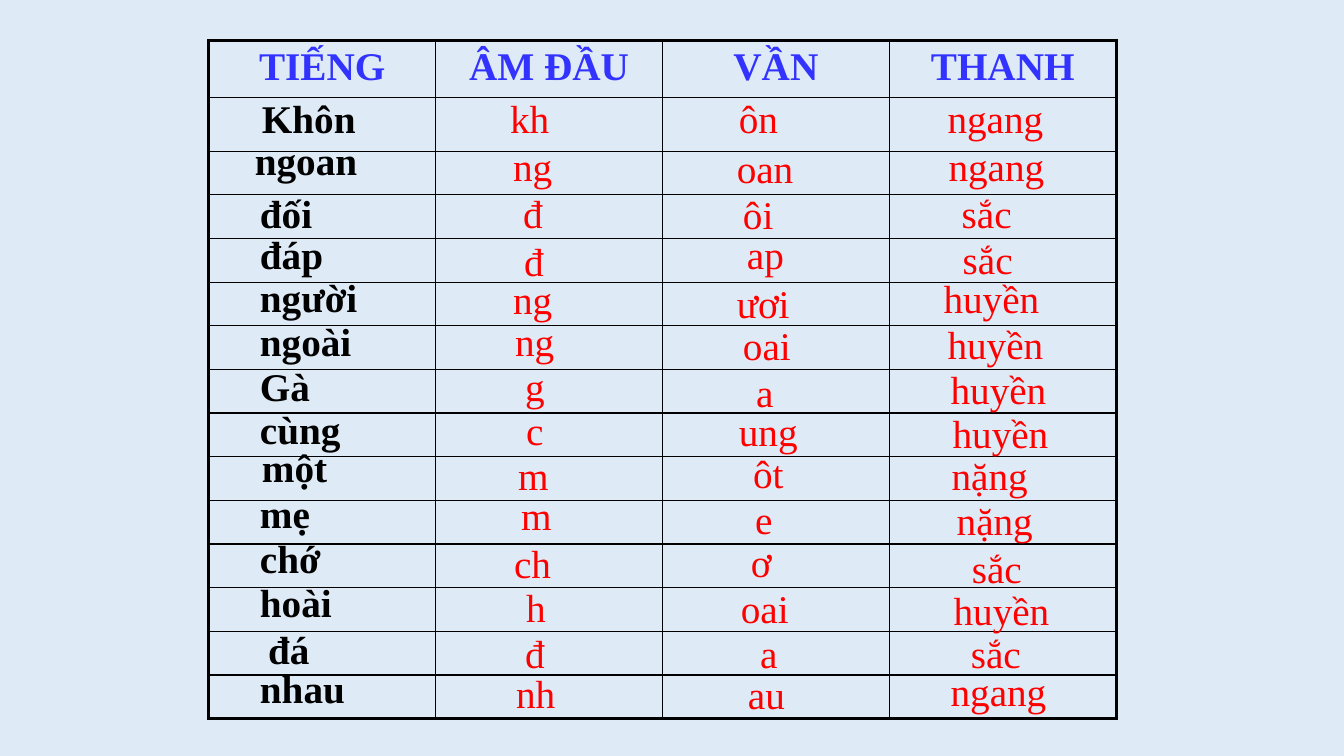
import pptx
import pptx.dml.color
import pptx.enum.text
import pptx.oxml.ns
import pptx.util
import lxml.etree

Inches = pptx.util.Inches

headings = ["TIẾNG", "ÂM ĐẦU", "VẦN", "THANH"]
# syllables: (width, tone width, then (part, left, top) per column)
syllables = [
    (1.51, 1.51, ("Khôn", 2.5, 0.89), ("kh", 4.96, 0.89), ("ôn", 7.23, 0.89), ("ngang", 9.3, 0.89)),
    (2.04, 2.04, ("ngoan", 2.43, 1.3), ("ng", 4.99, 1.36), ("oan", 7.21, 1.38), ("ngang", 9.31, 1.36)),
    (2.08, 2.08, ("đối", 2.48, 1.83), ("đ", 5.09, 1.83), ("ôi", 7.27, 1.84), ("sắc", 9.44, 1.83)),
    (1.51, 2.08, ("đáp", 2.48, 2.24), ("đ", 5.1, 2.31), ("ap", 7.31, 2.24), ("sắc", 9.45, 2.29)),
    (2.2, 1.51, ("người", 2.48, 2.66), ("ng", 4.99, 2.68), ("ươi", 7.21, 2.72), ("huyền", 9.26, 2.67)),
    (1.85, 1.51, ("ngoài", 2.48, 3.1), ("ng", 5.01, 3.1), ("oai", 7.27, 3.14), ("huyền", 9.3, 3.13)),
    (1.51, 1.51, ("Gà", 2.48, 3.55), ("g", 5.11, 3.55), ("a", 7.4, 3.6), ("huyền", 9.33, 3.58)),
    (1.51, 1.51, ("cùng", 2.48, 3.97), ("c", 5.12, 3.98), ("ung", 7.23, 3.99), ("huyền", 9.35, 4.01)),
    (1.51, 1.51, ("một", 2.5, 4.35), ("m", 5.04, 4.43), ("ôt", 7.37, 4.41), ("nặng", 9.34, 4.43)),
    (1.51, 1.51, ("mẹ", 2.48, 4.81), ("m", 5.07, 4.83), ("e", 7.39, 4.86), ("nặng", 9.39, 4.87)),
    (1.74, 2.08, ("chớ", 2.48, 5.25), ("ch", 5, 5.3), ("ơ", 7.35, 5.29), ("sắc", 9.54, 5.35)),
    (2.08, 1.51, ("hoài", 2.48, 5.69), ("h", 5.12, 5.74), ("oai", 7.25, 5.75), ("huyền", 9.36, 5.77)),
    (1.51, 2.08, ("đá", 2.56, 6.15), ("đ", 5.11, 6.19), ("a", 7.44, 6.19), ("sắc", 9.53, 6.19)),
    (1.51, 1.51, ("nhau", 2.48, 6.54), ("nh", 5.02, 6.59), ("au", 7.32, 6.6), ("ngang", 9.33, 6.57)),
]

theme = {
    "background": "DEEBF7",
    "border": "000000",
    "inner_line": 1,
    "outer_line": 2.25,
    "heading": {"name": "Times New Roman", "size": pptx.util.Pt(28), "bold": True, "color": "3333FF"},
    "syllable": {"name": "Times New Roman", "size": pptx.util.Pt(28), "bold": True, "color": "000000"},
    "part": {"name": "Times New Roman", "size": pptx.util.Pt(28), "bold": False, "color": "FF0000"},
}


def rgb(code):
    return pptx.dml.color.RGBColor.from_string(code)


def write(paragraph, text, style):
    run = paragraph.add_run()
    run.text = text
    for attribute, value in style.items():
        if attribute == "color":
            run.font.color.rgb = rgb(value)
        else:
            setattr(run.font, attribute, value)


def draw_borders(cell, outer_sides):
    properties = cell._tc.get_or_add_tcPr()
    qn = pptx.oxml.ns.qn
    for side in "LRTB":
        weight = theme["outer_line" if side in outer_sides else "inner_line"]
        border = lxml.etree.SubElement(properties, qn(f"a:ln{side}"), w=str(pptx.util.Pt(weight)))
        ink = lxml.etree.SubElement(border, qn("a:solidFill"))
        lxml.etree.SubElement(ink, qn("a:srgbClr"), val=theme["border"])


def add_grid(slide):
    last_row, last_column = len(syllables), len(headings) - 1
    heights = [0.57, 0.53] + [(6.73 - 0.57 - 0.53) / (last_row - 1)] * (last_row - 1)
    grid = slide.shapes.add_table(
        last_row + 1, last_column + 1, Inches(2.07), Inches(0.4), Inches(9), Inches(6.73)
    ).table
    grid.first_row = grid.horz_banding = False
    for row, height in zip(grid.rows, heights):
        row.height = Inches(height)
    for r in range(last_row + 1):
        for c in range(last_column + 1):
            edges = {"L": c == 0, "R": c == last_column, "T": r == 0, "B": r == last_row}
            cell = grid.cell(r, c)
            draw_borders(cell, [side for side, outer in edges.items() if outer])
            cell.fill.background()
    for c, heading in enumerate(headings):
        paragraph = grid.cell(0, c).text_frame.paragraphs[0]
        paragraph.alignment = pptx.enum.text.PP_ALIGN.CENTER
        write(paragraph, heading, theme["heading"])


def add_parts(slide):
    for width, tone_width, *parts in syllables:
        widths = [width] * 3 + [tone_width]
        styles = [theme["syllable"]] + [theme["part"]] * 3
        for (text, left, top), part_width, style in zip(parts, widths, styles):
            frame = slide.shapes.add_textbox(
                Inches(left), Inches(top), Inches(part_width), Inches(0.57)
            ).text_frame
            frame.word_wrap = True
            frame.auto_size = pptx.enum.text.MSO_AUTO_SIZE.SHAPE_TO_FIT_TEXT
            write(frame.paragraphs[0], text, style)


def main():
    deck = pptx.Presentation()
    deck.slide_width, deck.slide_height = Inches(13.33), Inches(7.5)
    slide = deck.slides.add_slide(deck.slide_layouts[6])
    slide.background.fill.solid()
    slide.background.fill.fore_color.rgb = rgb(theme["background"])
    add_grid(slide)
    add_parts(slide)
    deck.save("out.pptx")


if __name__ == "__main__":
    main()
